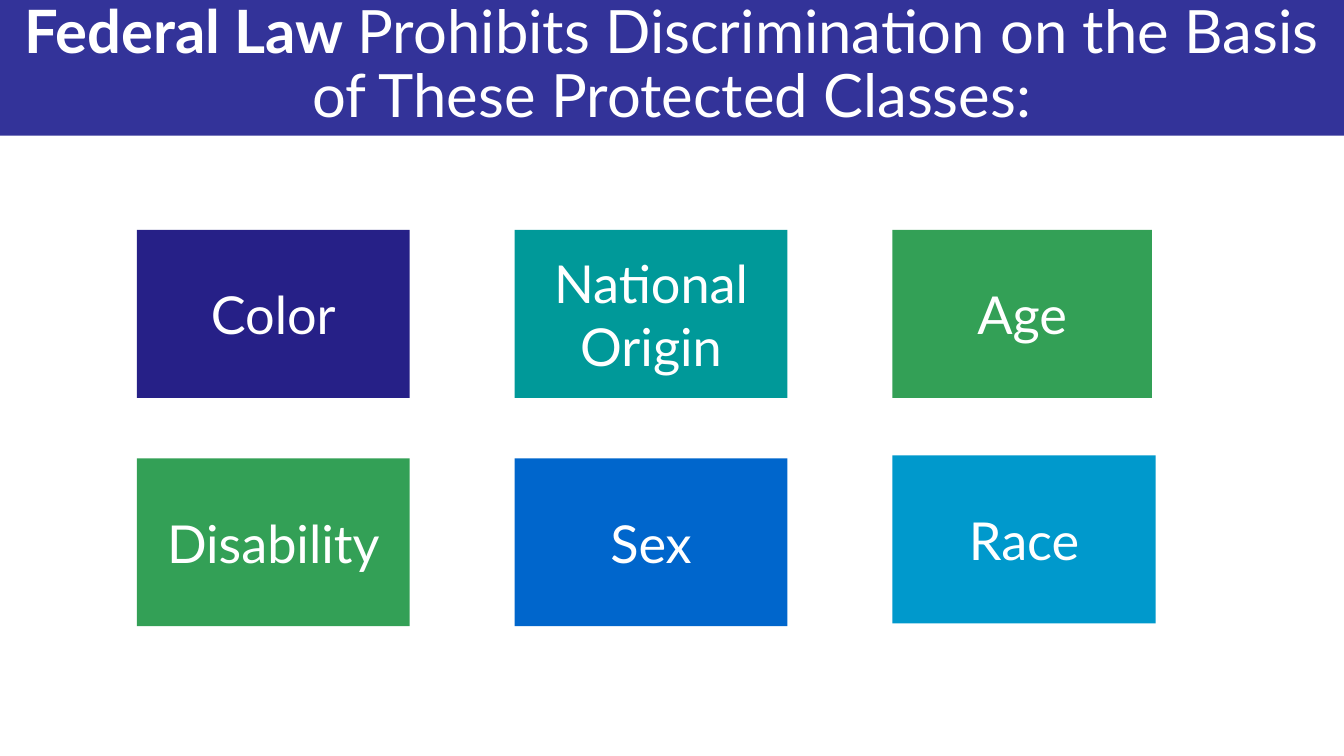
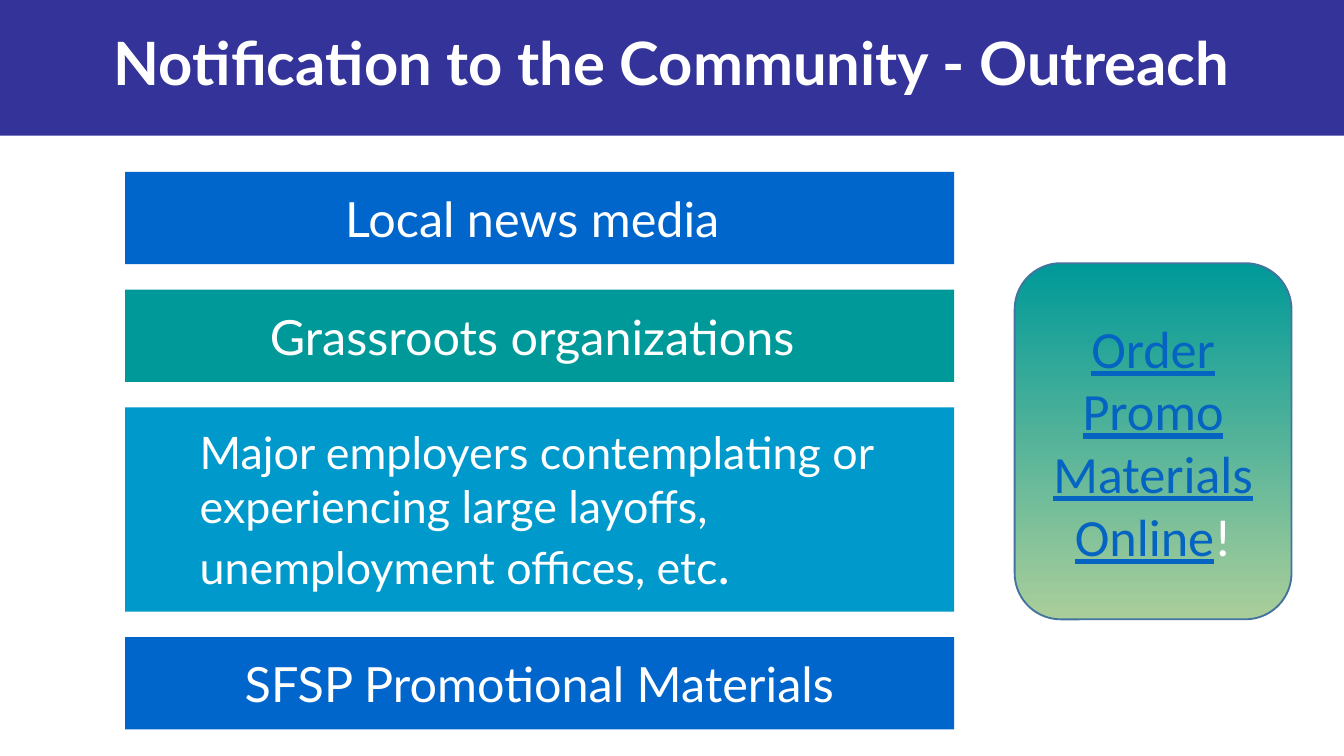
from pptx import Presentation
from pptx.dml.color import RGBColor
from pptx.enum.shapes import MSO_SHAPE as SHAPE
from pptx.enum.text import MSO_ANCHOR as ANCHOR, MSO_AUTO_SIZE as AUTO, PP_ALIGN as ALIGN
from pptx.util import Pt

WHITE, BAND, NAVY = "FFFFFF", "333399", "262087"
BLUE, TEAL, SKY, GREEN = "0066CC", "009999", "0099CC", "33A056"
LIGHT_GREEN, LINK, OUTLINE = "AACE9A", "0563C1", "43739E"


def rgb(value):
    return RGBColor.from_string(value)


def write(sp, runs, align=ALIGN.CENTER, left=7.2, right=7.2, spacing=None,
          size=28, font="Lato", color=WHITE, bold=False):
    tf = sp.text_frame
    tf.word_wrap = True
    tf.auto_size = AUTO.NONE
    tf.vertical_anchor = ANCHOR.MIDDLE
    tf.margin_left, tf.margin_right = Pt(left), Pt(right)
    p = tf.paragraphs[0]
    p.alignment = align
    if spacing:
        p.line_spacing = spacing
    for text, fmt in runs:
        r = p.add_run()
        r.text = text
        r.font.name = fmt.get("font", font)
        r.font.size = Pt(fmt.get("size", size))
        r.font.bold = fmt.get("bold", bold)
        r.font.underline = fmt.get("underline", False)
        r.font.color.rgb = rgb(fmt.get("color", color))


prs = Presentation()
prs.slide_width, prs.slide_height = Pt(720), Pt(405)
layout = prs.slide_layouts[5]

titles = [
    [("Federal Law ", {"bold": True}),
     ("Prohibits Discrimination on the Basis of These Protected Classes:", {})],
    [("Notification to the Community - Outreach", {"bold": True})],
]
for runs in titles:
    s = prs.slides.add_slide(layout)
    title = s.shapes.title
    title.left, title.top, title.width, title.height = Pt(0), Pt(0), Pt(720), Pt(71)
    write(title, runs, size=32, spacing=0.9)
classes, outreach = prs.slides

band = classes.shapes.add_shape(SHAPE.RECTANGLE, Pt(-0.7), Pt(0), Pt(720.7), Pt(72.7))
band.shadow.inherit = False
band.fill.solid()
band.fill.fore_color.rgb = rgb(BAND)
band.line.fill.background()
layout.shapes.element.insert(2, band.element)

boxes = []
cards = [
    ("Color", NAVY, 146.2, 0), ("National Origin", TEAL, 146.2, 0), ("Age", GREEN, 139, 0),
    ("Disability", GREEN, 146.2, 0), ("Sex", BLUE, 146.2, 0), ("Race", SKY, 141.1, -1.5),
]
for i, (text, color, width, shift) in enumerate(cards):
    row, col = divmod(i, 3)
    left, top = 73.3 + col * 202.4, 123.2 + row * 122.3 + shift
    boxes.append((classes, left, top, width, 90, color, [(text, {})], {}))

top = 92.1
bars = [
    ([("Local news media", {})], BLUE, 49.5, {"size": 26, "right": 14.7}),
    ([("Grassroots organizations", {})], TEAL, 49.5, {"size": 26, "right": 14.7}),
    ([("Major employers contemplating or experiencing large layoffs, unemployment offices, etc", {}),
      (".", {"size": 28})], SKY, 109.4, {"size": 24, "left": 40, "align": ALIGN.LEFT}),
    ([("SFSP Promotional Materials", {})], BLUE, 49.5, {"size": 26}),
]
for runs, color, height, fmt in bars:
    boxes.append((outreach, 67, top, 444.2, height, color, runs, fmt))
    top += height + 13.6

for s, left, top, width, height, color, runs, fmt in boxes:
    sp = s.shapes.add_shape(SHAPE.RECTANGLE, Pt(left), Pt(top), Pt(width), Pt(height))
    sp.shadow.inherit = False
    sp.fill.solid()
    sp.fill.fore_color.rgb = rgb(color)
    sp.line.fill.background()
    write(sp, runs, **fmt)

order = outreach.shapes.add_shape(SHAPE.ROUNDED_RECTANGLE, Pt(543.6), Pt(141), Pt(148.3), Pt(190.8))
order.shadow.inherit = False
order.fill.gradient()
order.fill.gradient_angle = 270
for stop, color, position in zip(order.fill.gradient_stops, (TEAL, LIGHT_GREEN), (0, 1)):
    stop.color.rgb = rgb(color)
    stop.position = position
order.line.color.rgb = rgb(OUTLINE)
order.line.width = Pt(1)
write(order, [("Order Promo Materials Online", {"color": LINK, "underline": True}), ("!", {})],
      font="Calibri")

prs.save("out.pptx")
